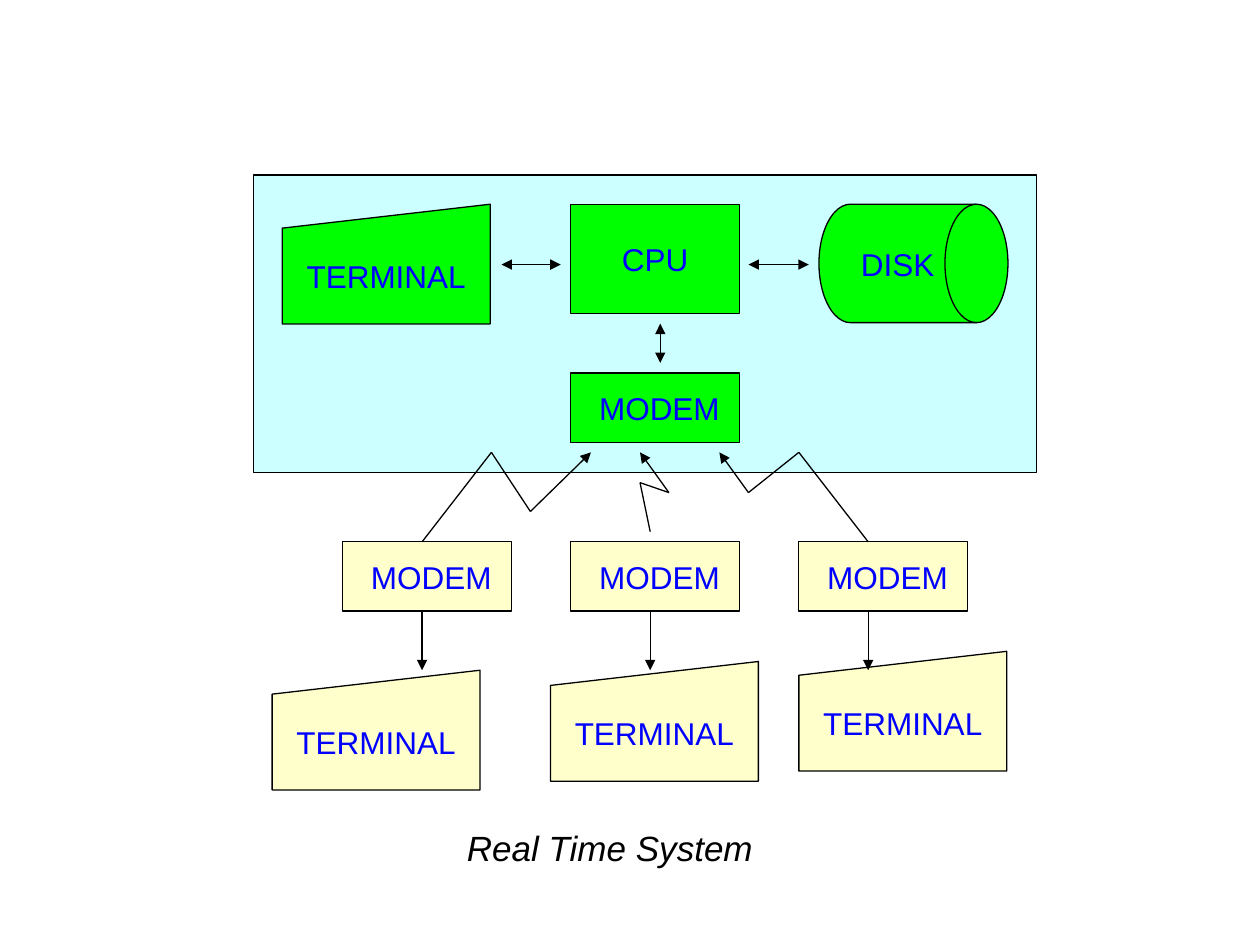
from itertools import pairwise

from pptx import Presentation
from pptx.dml.color import RGBColor
from pptx.enum.shapes import MSO_CONNECTOR, MSO_SHAPE
from pptx.enum.text import MSO_ANCHOR, MSO_AUTO_SIZE, PP_ALIGN
from pptx.oxml.ns import qn
from pptx.util import Pt
from lxml.etree import SubElement

BLACK = RGBColor(0x00, 0x00, 0x00)
BLUE = RGBColor(0x00, 0x00, 0xFF)
GREEN = RGBColor(0x00, 0xFF, 0x00)
CREAM = RGBColor(0xFF, 0xFF, 0xCC)
PALE_CYAN = RGBColor(0xCC, 0xFF, 0xFF)

FONT = "Arial"
LINE_WIDTH = 0.75
MODEM_SIZE = (96.5, 39.6)
TERMINAL_SIZE = (118.8, 68.4)

# Remote modems stand in a row at equal steps
MODEM_LEFT, MODEM_TOP, MODEM_STEP = 195.8, 309.6, 130.35

# Per branch, relative to its modem: line x, terminal corner, zigzag points
BRANCHES = [
    (45.4, (-40.3, 73.4), [(45.4, 0), (85, -51.1), (107.3, -17.3), (141.9, -51.1)]),
    (45.4, (-11.6, 68.4), [(45.4, -5.8), (39.6, -33.8), (56.1, -28.1), (39.6, -51.1)]),
    (39.6, (0, 62.6), [(39.6, 0), (0, -51.1), (-28.8, -28.1), (-45.4, -51.1)]),
]


def add_run(paragraph, text, size, color, italic=False):
    paragraph.alignment = PP_ALIGN.CENTER
    run = paragraph.add_run()
    run.text = text
    run.font.name = FONT
    run.font.size = Pt(size)
    run.font.italic = italic
    run.font.color.rgb = color


def add_node(slide, kind, left, top, size, fill, label=None):
    width, height = size
    shape = slide.shapes.add_shape(kind, Pt(left), Pt(top), Pt(width), Pt(height))
    shape.shadow.inherit = False
    shape.fill.solid()
    shape.fill.fore_color.rgb = fill
    shape.line.color.rgb = BLACK
    shape.line.width = Pt(LINE_WIDTH)
    if label:
        frame = shape.text_frame
        frame.word_wrap = False
        frame.vertical_anchor = MSO_ANCHOR.MIDDLE
        add_run(frame.paragraphs[0], label, 18, BLUE)


def add_line(slide, start, end, head=False, tail=False):
    connector = slide.shapes.add_connector(
        MSO_CONNECTOR.STRAIGHT, *(Pt(value) for value in (*start, *end))
    )
    connector.line.color.rgb = BLACK
    connector.line.width = Pt(LINE_WIDTH)
    properties = connector.line._get_or_add_ln()
    for tag, wanted in (("a:headEnd", head), ("a:tailEnd", tail)):
        if wanted:
            SubElement(properties, qn(tag)).set("type", "triangle")
    SubElement(connector._element.spPr, qn("a:effectLst"))


def add_central_system(slide, left, top, width, height):
    add_node(slide, MSO_SHAPE.RECTANGLE, left, top, (width, height), PALE_CYAN)

    # Devices
    devices = [
        (MSO_SHAPE.FLOWCHART_MANUAL_INPUT, 16.6, 16.6, TERMINAL_SIZE, "TERMINAL"),
        (MSO_SHAPE.RECTANGLE, 181.4, 16.6, (96.5, 62.6), "CPU"),
        (MSO_SHAPE.FLOWCHART_DIRECT_ACCESS_STORAGE, 323.3, 16.6, (108, 67.7), "DISK"),
        (MSO_SHAPE.RECTANGLE, 181.4, 113, MODEM_SIZE, " MODEM"),
    ]
    for kind, x, y, size, label in devices:
        add_node(slide, kind, left + x, top + y, size, GREEN, label)

    # Two-way links to the CPU
    links = [
        ((232.6, 84.9), (232.6, 107.3)),
        ((141.9, 51.1), (175.7, 51.1)),
        ((283, 51.1), (317.5, 51.1)),
    ]
    for (x1, y1), (x2, y2) in links:
        add_line(slide, (left + x1, top + y1), (left + x2, top + y2), True, True)


def add_branch(slide, left, top, line_x, terminal, zigzag):
    # Modem and terminal
    add_node(slide, MSO_SHAPE.RECTANGLE, left, top, MODEM_SIZE, CREAM, " MODEM")
    add_node(slide, MSO_SHAPE.FLOWCHART_MANUAL_INPUT, left + terminal[0],
             top + terminal[1], TERMINAL_SIZE, CREAM, "TERMINAL")
    add_line(slide, (left + line_x, top + MODEM_SIZE[1]),
             (left + line_x, top + 73.4), tail=True)

    # Zigzag line to the central modem, with an arrow on its last leg
    points = [(left + x, top + y) for x, y in zigzag]
    for start, end in pairwise(points):
        add_line(slide, start, end, tail=end == points[-1])


def add_caption(slide, left, top, width, height):
    caption = slide.shapes.add_textbox(Pt(left), Pt(top), Pt(width), Pt(height))
    frame = caption.text_frame
    frame.word_wrap = True
    frame.auto_size = MSO_AUTO_SIZE.SHAPE_TO_FIT_TEXT
    add_run(frame.paragraphs[0], "Real Time System", 20, BLACK, italic=True)


def main():
    presentation = Presentation()
    presentation.slide_width = Pt(720)
    presentation.slide_height = Pt(540)
    slide = presentation.slides.add_slide(presentation.slide_layouts[6])

    add_central_system(slide, 144.7, 100.1, 447.8, 169.9)
    for index, branch in enumerate(BRANCHES):
        add_branch(slide, MODEM_LEFT + index * MODEM_STEP, MODEM_TOP, *branch)
    add_caption(slide, 257.8, 468.7, 181.4, 31)

    presentation.save("out.pptx")


if __name__ == "__main__":
    main()
